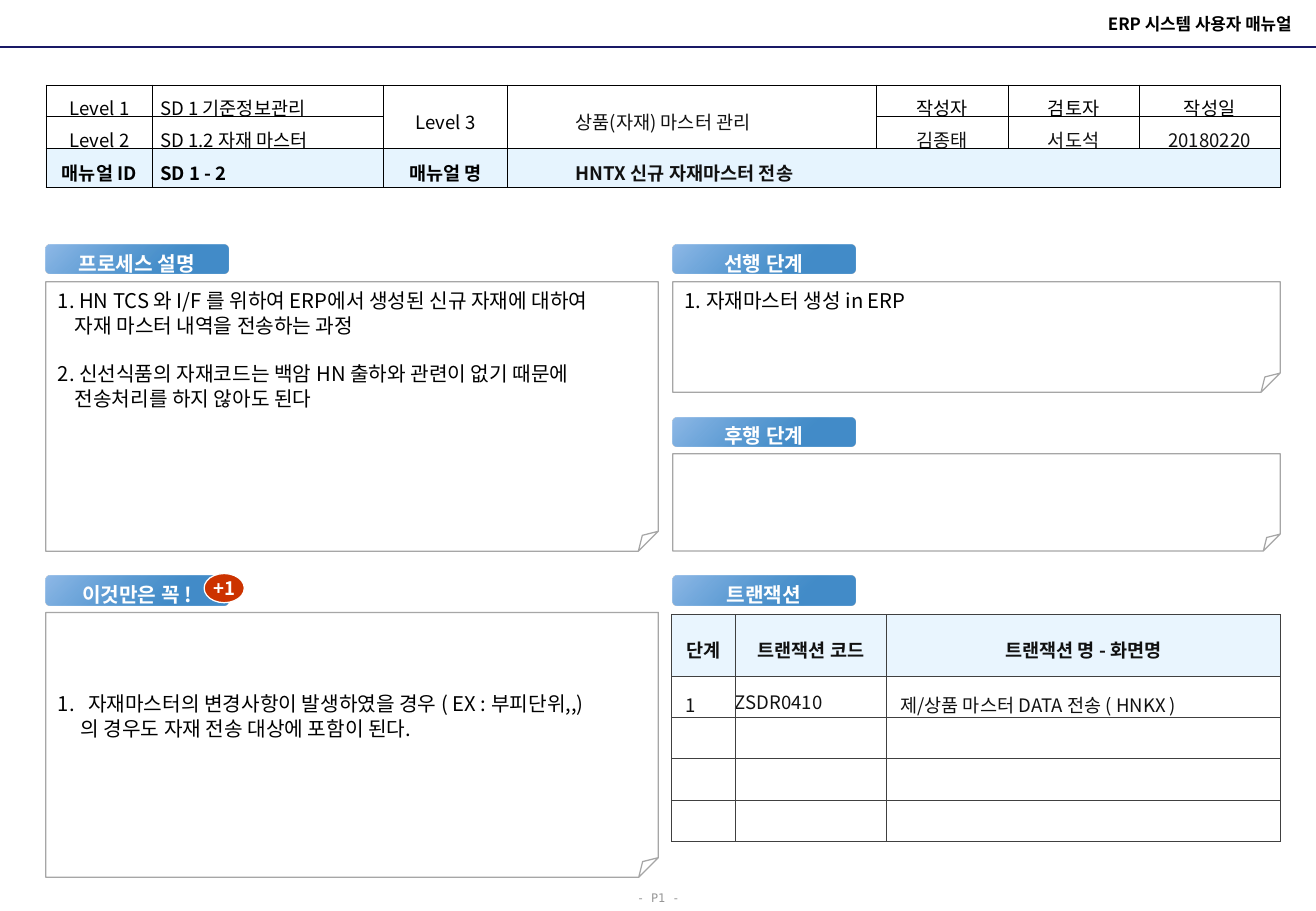
"""Build the material master transfer page of the ERP user manual."""
from dataclasses import dataclass
from typing import Any, Optional

from lxml.etree import SubElement
from pptx import Presentation
from pptx.dml.color import RGBColor as Rgb
from pptx.enum.shapes import MSO_CONNECTOR as Connector, MSO_SHAPE as Shape
from pptx.enum.text import MSO_ANCHOR as Anchor, PP_ALIGN as Align
from pptx.oxml import parse_xml
from pptx.oxml.ns import nsdecls, qn
from pptx.util import Pt

COLORS = {
    "black": "000000", "ink": "111111", "white": "FFFFFF", "navy": "191966",
    "gray": "969696", "outline": "A6A6A6", "grid": "404040", "sky": "93D1FB",
    "badge": "CC3300", "pale": "C6D9F1", "light": "90BAE8", "deep": "1973BD",
}
FONT = "Noto Sans CJK KR"
LEFT, RIGHT = 27.2, 398.8
BODY_LEADING = Pt(14.75)


@dataclass
class Line:
    text: str
    size: float = 12
    color: str = "black"
    bold: bool = False
    align: Any = Align.LEFT
    spacing: Any = None
    before: float = 0
    margin: float = 0
    hanging: float = 0
    numbered: bool = False
    font: str = FONT


@dataclass
class Section:
    title: str
    left: float
    top: float


@dataclass
class Note:
    left: float
    top: float
    width: float
    height: float
    fold: float
    lines: list[Line]
    inset_top: float = 3.6


@dataclass
class Cell:
    line: Line
    fill: Optional[str] = None
    alpha: int = 100
    insets: tuple[float, float] = (7.9, 3.6)


@dataclass
class Grid:
    left: float
    top: float
    widths: list[float]
    heights: list[float]
    border: str
    cells: dict[tuple[int, int], Cell]
    merges: list[tuple[int, int, int, int]]


def rgb(name: str) -> Rgb:
    return Rgb.from_string(COLORS[name])


def assign(target: Any, values: dict[str, Any]) -> None:
    for name, value in values.items():
        setattr(target, name, value)


def write(frame: Any, lines: list[Line]) -> None:
    for index, line in enumerate(lines):
        paragraph = frame.paragraphs[0] if index == 0 else frame.add_paragraph()
        properties = paragraph._p.get_or_add_pPr()
        if line.margin:
            properties.set("marL", str(Pt(line.margin)))
            properties.set("indent", str(Pt(-line.hanging)))
        if line.numbered:
            SubElement(properties, qn("a:buFont")).set("typeface", "+mj-lt")
            SubElement(properties, qn("a:buAutoNum")).set("type", "arabicPeriod")
        assign(paragraph, {"alignment": line.align, "line_spacing": line.spacing})
        if line.before:
            paragraph.space_before = Pt(line.before)
        run = paragraph.add_run()
        run.text = line.text
        assign(run.font, {"size": Pt(line.size), "bold": line.bold, "name": line.font})
        run.font.color.rgb = rgb(line.color)
        SubElement(run._r.get_or_add_rPr(), qn("a:ea")).set("typeface", line.font)


def set_frame(frame: Any, anchor: Any, wrap: bool, insets: tuple[float, float, float, float]) -> None:
    sides = ("margin_left", "margin_top", "margin_right", "margin_bottom")
    values = {side: Pt(inset) for side, inset in zip(sides, insets)}
    assign(frame, {"vertical_anchor": anchor, "word_wrap": wrap, **values})


def add_label(slide: Any, section: Section) -> None:
    label = slide.shapes.add_shape(
        Shape.ROUNDED_RECTANGLE, Pt(section.left), Pt(section.top), Pt(108), Pt(17.3))
    label.line.fill.background()
    label.shadow.inherit = False
    stops = "".join(
        f'<a:gs pos="{position * 1000}"><a:srgbClr val="{COLORS[color]}">'
        f'<a:alpha val="{alpha * 1000}"/></a:srgbClr></a:gs>'
        for position, color, alpha in ((0, "pale", 100), (0, "light", 100), (70, "deep", 82)))
    label._element.spPr.insert(2, parse_xml(
        f'<a:gradFill {nsdecls("a")} rotWithShape="1"><a:gsLst>{stops}</a:gsLst>'
        '<a:lin ang="2700000" scaled="0"/></a:gradFill>'))
    set_frame(label.text_frame, Anchor.MIDDLE, True, (0, 0, 0, 2.9))
    write(label.text_frame, [Line(section.title, color="white", bold=True, align=Align.CENTER,
                                  spacing=1.5, margin=7.2, hanging=7.2)])


def add_note(slide: Any, note: Note) -> None:
    sheet = slide.shapes.add_shape(
        Shape.FOLDED_CORNER, Pt(note.left), Pt(note.top), Pt(note.width), Pt(note.height))
    guide = SubElement(sheet._element.spPr.find(".//" + qn("a:avLst")), qn("a:gd"))
    guide.set("name", "adj")
    guide.set("fmla", f"val {round(note.fold * 100000)}")
    sheet.fill.background()
    sheet.line.color.rgb = rgb("outline")
    sheet.line.width = Pt(0.75)
    sheet.shadow.inherit = False
    set_frame(sheet.text_frame, Anchor.TOP, True, (7.2, note.inset_top, 7.2, 3.6))
    write(sheet.text_frame, note.lines)


def add_text(slide: Any, box: tuple[float, ...], wrap: bool, anchor: Any, line: Line) -> None:
    frame = slide.shapes.add_textbox(*map(Pt, box)).text_frame
    set_frame(frame, anchor, wrap, (7.2, 3.6, 7.2, 3.6))
    write(frame, [line])


def add_grid(slide: Any, grid: Grid) -> None:
    table = slide.shapes.add_table(
        len(grid.heights), len(grid.widths), Pt(grid.left), Pt(grid.top),
        Pt(sum(grid.widths)), Pt(sum(grid.heights))).table
    assign(table, {"first_row": False, "horz_banding": False})
    for column, width in zip(table.columns, grid.widths):
        column.width = Pt(width)
    for row, height in zip(table.rows, grid.heights):
        row.height = Pt(height)
    for top, left, bottom, right in grid.merges:
        table.cell(top, left).merge(table.cell(bottom, right))
    for row in range(len(grid.heights)):
        for column in range(len(grid.widths)):
            target = table.cell(row, column)
            content = grid.cells.get((row, column), Cell(Line("", 11), insets=(7.9, 0)))
            if content.fill:
                target.fill.solid()
                target.fill.fore_color.rgb = rgb(content.fill)
                tint = target._tc.tcPr.find(".//" + qn("a:srgbClr"))
                SubElement(tint, qn("a:alpha")).set("val", str(content.alpha * 1000))
            else:
                target.fill.background()
            side, end = map(Pt, content.insets)
            assign(target, {"vertical_anchor": Anchor.MIDDLE, "margin_left": side,
                            "margin_right": side, "margin_top": end, "margin_bottom": end})
            for index, edge in enumerate(("lnL", "lnR", "lnT", "lnB")):
                target._tc.tcPr.insert(index, parse_xml(
                    f'<a:{edge} {nsdecls("a")} w="{Pt(0.5)}"><a:solidFill>'
                    f'<a:srgbClr val="{COLORS[grid.border]}"/></a:solidFill></a:{edge}>'))
            if content.line.text:
                write(target.text_frame, [content.line])


def summary_cells() -> dict[tuple[int, int], Cell]:
    rows = [
        ["Level 1", "SD 1 기준정보관리", "Level 3", "상품(자재) 마스터 관리", "작성자", "검토자", "작성일"],
        ["Level 2", "SD 1.2 자재 마스터", "", "", "김종태", "서도석", "20180220"],
        ["매뉴얼 ID", "SD 1 - 2", "매뉴얼 명", "HNTX 신규 자재마스터 전송", "", "", ""],
    ]
    return {
        (r, c): Cell(
            Line(text, 11, "ink" if c == 3 or (r == 1 and c > 3) else "black", r == 2,
                 Align.LEFT if c in (1, 3) else Align.CENTER, 1.3, margin=36 if c == 3 else 0),
            "sky" if r == 2 else "white", 23 if r == 2 else 100, (4.3, 0.7))
        for r, texts in enumerate(rows) for c, text in enumerate(texts)}


def transaction_cells() -> dict[tuple[int, int], Cell]:
    headings = ["단계", "트랜잭션 코드", "트랜잭션 명 - 화면명"]
    entries = ["1", "ZSDR0410", "제/상품 마스터 DATA 전송 ( HNKX )"]
    cells = {(0, c): Cell(Line(text, 11, "ink", True, Align.CENTER, 1.3), "sky", 20)
             for c, text in enumerate(headings)}
    cells.update({(1, c): Cell(Line(text, 11, "ink", spacing=1.3),
                               insets=(0, 0) if c == 1 else (7.9, 3.6))
                  for c, text in enumerate(entries)})
    return cells


def body(text: str, **options: Any) -> Line:
    return Line(text, spacing=BODY_LEADING, **options)


SECTIONS = [
    Section("프로세스 설명", LEFT, 145.1), Section("선행 단계", RIGHT, 145.1),
    Section("후행 단계", RIGHT, 247.5), Section("트랜잭션", RIGHT, 341.5),
    Section("이것만은 꼭 !", LEFT, 341.5),
]
NOTES = [
    Note(LEFT, 167, 363, 159.8, 0.074, [
        body("1. HN TCS 와 I/F 를 위하여 ERP에서 생성된 신규 자재에 대하여"),
        body("자재 마스터 내역을 전송하는 과정", margin=10),
        body("2. 신선식품의 자재코드는 백암 HN 출하와 관련이 없기 때문에", before=13.8),
        body("전송처리를 하지 않아도 된다", margin=10)]),
    Note(RIGHT, 167, 360, 65.5, 0.173, [body("1. 자재마스터 생성 in ERP")]),
    Note(RIGHT, 269, 360, 57.6, 0.173, []),
    Note(LEFT, 363, 363, 157, 0.074, [
        body("자재마스터의 변경사항이 발생하였을 경우 ( EX : 부피단위,,)",
             margin=18, hanging=18, numbered=True),
        body("의 경우도 자재 전송 대상에 포함이 된다.", margin=13.5)], 46.6),
]
GRIDS = [
    Grid(398.2, 364.2, [37.4, 90, 233.3], [36.7, 23.1, 24.5, 24.5, 24.5], "grid",
         transaction_cells(), []),
    Grid(LEFT, 50.4, [63.4, 136.8, 73.4, 218.9, 77.8, 77.8, 83.5], [18.9, 18.9, 22.8], "black",
         summary_cells(), [(0, 2, 1, 2), (0, 3, 1, 3), (2, 3, 2, 6)]),
]


def main() -> None:
    deck = Presentation()
    assign(deck, {"slide_width": Pt(780), "slide_height": Pt(540)})
    slide = deck.slides.add_slide(deck.slide_layouts[6])
    add_text(slide, (370, 522, 40.3, 18), False, Anchor.TOP,
             Line("- P1 -", 7, "gray", spacing=1.3, align=Align.CENTER, font="DejaVu Sans Mono"))
    rule = slide.shapes.add_connector(Connector.STRAIGHT, Pt(0), Pt(28), Pt(780), Pt(28))
    rule.line.color.rgb = rgb("navy")
    rule.line.width = Pt(1.5)
    SubElement(rule._element.spPr, qn("a:effectLst"))
    add_text(slide, (434.9, 4.3, 337.7, 19.4), True, Anchor.MIDDLE,
             Line("ERP 시스템 사용자 매뉴얼", 10, bold=True, align=Align.RIGHT))
    for grid in GRIDS:
        add_grid(slide, grid)
    for section in SECTIONS:
        add_label(slide, section)
    for note in NOTES:
        add_note(slide, note)
    badge = slide.shapes.add_shape(Shape.OVAL, Pt(121), Pt(340), Pt(23.8), Pt(17.3))
    badge.fill.solid()
    badge.fill.fore_color.rgb = rgb("badge")
    badge.line.color.rgb = rgb("white")
    badge.line.width = Pt(0.75)
    badge.shadow.inherit = False
    set_frame(badge.text_frame, Anchor.MIDDLE, False, (7.2, 3.6, 7.2, 3.6))
    write(badge.text_frame, [Line("+1", 11, "white", True, Align.CENTER)])
    deck.save("out.pptx")


if __name__ == "__main__":
    main()
